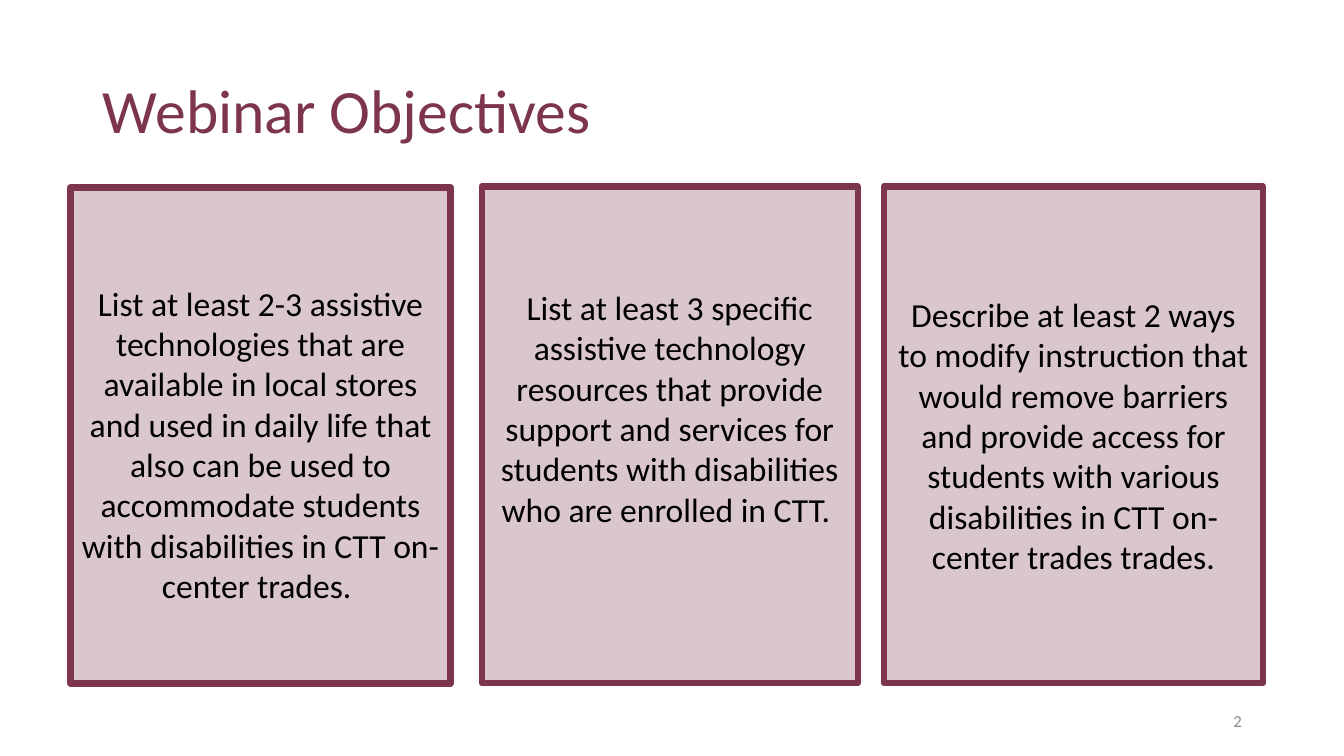
from dataclasses import dataclass

from lxml import etree
from pptx import Presentation
from pptx.dml.color import RGBColor
from pptx.enum import shapes, text
from pptx.oxml import ns
from pptx.shapes import autoshape
from pptx.util import Pt

PLUM = RGBColor(0x7C, 0x35, 0x4D)
BLACK = RGBColor(0x00, 0x00, 0x00)
GRAY = RGBColor(0x8C, 0x8C, 0x8C)
FONT = "Calibri"
CARD_OPACITY = 28  # percent
INSET = 3.6


@dataclass
class Card:
    """One objective; lengths in points."""
    left: float
    top: float
    width: float
    height: float
    wording: str
    extra_top: float = 0
    extra_bottom: float = 0


CARDS = [
    Card(50.4, 133.92, 271.44, 354.24,
         "List at least 2-3 assistive technologies that are available in local "
         "stores and used in daily life that also can be used to accommodate "
         "students with disabilities in CTT on-center trades. ", extra_top=12),
    Card(344.16, 133.2, 268.56, 354.96,
         "List at least 3 specific assistive technology resources that provide "
         "support and services for students with disabilities who are enrolled "
         "in CTT. ", extra_bottom=38.5),
    Card(631.44, 133.2, 270.72, 354.96,
         "Describe at least 2 ways to modify instruction that would remove "
         "barriers and provide access for students with various disabilities "
         "in CTT on-center trades trades."),
]


def place(shape: autoshape.Shape, left: float, top: float,
          width: float, height: float) -> None:
    shape.left, shape.top = Pt(left), Pt(top)
    shape.width, shape.height = Pt(width), Pt(height)


def write(shape: autoshape.Shape, wording: str, size: float, color: RGBColor,
          alignment: text.PP_ALIGN) -> None:
    """Put one vertically centred paragraph into the shape."""
    frame = shape.text_frame
    frame.text = wording
    frame.word_wrap = True
    frame.auto_size = text.MSO_AUTO_SIZE.NONE
    frame.vertical_anchor = text.MSO_ANCHOR.MIDDLE
    paragraph = frame.paragraphs[0]
    paragraph.alignment = alignment
    paragraph.space_before = Pt(0)
    font = paragraph.runs[0].font
    font.name, font.size, font.color.rgb = FONT, Pt(size), color


def format_card(shape: autoshape.Shape, card: Card) -> None:
    place(shape, card.left, card.top, card.width, card.height)
    shape.shadow.inherit = False
    shape.fill.solid()
    shape.fill.fore_color.rgb = PLUM
    fill_color = shape.element.spPr.find(ns.qn("a:solidFill")).find(ns.qn("a:srgbClr"))
    etree.SubElement(fill_color, ns.qn("a:alpha"), val=str(CARD_OPACITY * 1000))
    shape.line.color.rgb = PLUM
    shape.line.width = Pt(4.5)
    write(shape, card.wording, 24, BLACK, text.PP_ALIGN.CENTER)
    shape.text_frame.margin_top = Pt(INSET + card.extra_top)
    shape.text_frame.margin_bottom = Pt(INSET + card.extra_bottom)


def remove_bullet(shape: autoshape.Shape) -> None:
    properties = shape.text_frame.paragraphs[0]._p.get_or_add_pPr()
    properties.set("marL", "0")
    properties.set("indent", "0")
    etree.SubElement(properties, ns.qn("a:buNone"))


def main() -> None:
    presentation = Presentation()
    presentation.slide_width, presentation.slide_height = Pt(960), Pt(540)
    slide = presentation.slides.add_slide(presentation.slide_layouts[1])

    # Title
    title = slide.shapes.title
    place(title, 66.24, 28.8, 828, 104.4)
    write(title, "Webinar Objectives", 44, PLUM, text.PP_ALIGN.LEFT)
    title.text_frame.paragraphs[0].line_spacing = 0.9

    # Objectives: the first card is the body placeholder
    body = slide.placeholders[1]
    format_card(body, CARDS[0])
    remove_bullet(body)
    for card in CARDS[1:]:
        rectangle = slide.shapes.add_shape(
            shapes.MSO_SHAPE.RECTANGLE, Pt(card.left), Pt(card.top),
            Pt(card.width), Pt(card.height))
        format_card(rectangle, card)

    # Slide number
    number = slide.shapes.add_textbox(Pt(678.24), Pt(500.4), Pt(216), Pt(28.8))
    write(number, "2", 12, GRAY, text.PP_ALIGN.RIGHT)

    presentation.save("out.pptx")


if __name__ == "__main__":
    main()
